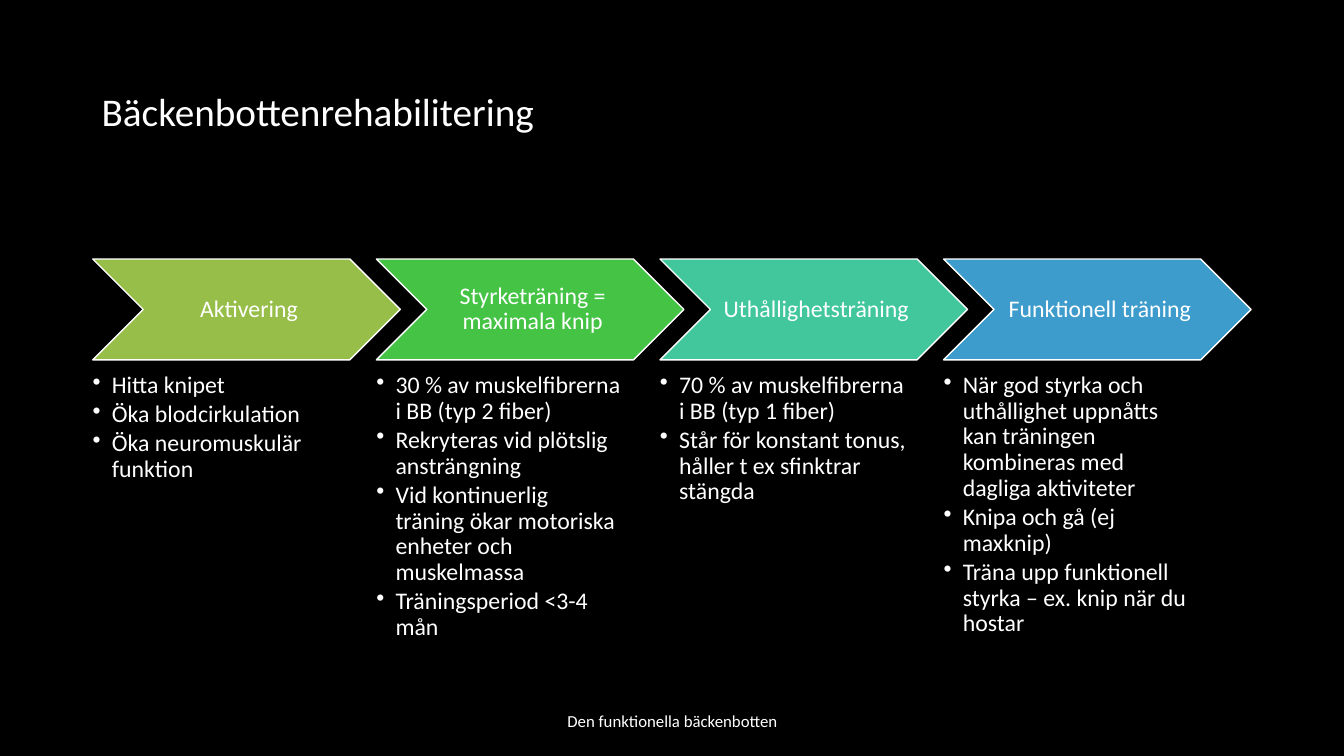
import pptx
import pptx.dml.color
import pptx.enum.shapes
import pptx.enum.text
import pptx.oxml.ns
import pptx.util
from lxml import etree

Inches = pptx.util.Inches
Pt = pptx.util.Pt
ALIGN = pptx.enum.text.PP_ALIGN
ANCHOR = pptx.enum.text.MSO_ANCHOR

WHITE = "FFFFFF"
LEFT, STEP = 0.92, 2.813
STAGES = [
    ("Aktivering", "97BE49", [
        "Hitta knipet",
        "Öka blodcirkulation",
        "Öka neuromuskulär funktion",
    ]),
    ("Styrketräning = maximala knip", "45C345", [
        "30 % av muskelfibrerna i BB (typ 2 fiber)",
        "Rekryteras vid plötslig ansträngning",
        "Vid kontinuerlig träning ökar motoriska enheter och muskelmassa",
        "Träningsperiod <3-4 mån",
    ]),
    ("Uthållighetsträning", "41C79B", [
        "70 % av muskelfibrerna i BB (typ 1 fiber)",
        "Står för konstant tonus, håller t ex sfinktrar stängda",
    ]),
    ("Funktionell träning", "3D9CCC", [
        "När god styrka och uthållighet uppnåtts kan träningen kombineras med dagliga aktiviteter",
        "Knipa och gå (ej maxknip)",
        "Träna upp funktionell styrka – ex. knip när du hostar",
    ]),
]


def color(hex_code):
    """Turn a hex string into a colour."""
    return pptx.dml.color.RGBColor.from_string(hex_code)


def set_text(sp, lines, size, align, anchor, insets, spacing=0.9):
    """Fill a shape with white paragraphs."""
    tf = sp.text_frame
    tf.word_wrap = True
    tf.vertical_anchor = anchor
    tf.margin_left, tf.margin_top, tf.margin_right, tf.margin_bottom = map(Inches, insets)
    tf.text = "\n".join(lines)
    for p in tf.paragraphs:
        p.alignment = align
        p.line_spacing = spacing
        for r in p.runs:
            r.font.name = "Calibri"
            r.font.size = Pt(size)
            r.font.color.rgb = color(WHITE)
    return tf


def add_label(s, text, box, size, align, spacing):
    """Add a one-line text box, centred vertically."""
    sp = s.shapes.add_textbox(*map(Inches, box))
    set_text(sp, [text], size, align, ANCHOR.MIDDLE, (0.1, 0.05, 0.1, 0.05), spacing)


def add_chevron(s, text, left, fill):
    """Add a stage arrow with its name."""
    sp = s.shapes.add_shape(pptx.enum.shapes.MSO_SHAPE.CHEVRON,
                            Inches(left), Inches(2.57), Inches(3.05), Inches(1))
    sp.shadow.inherit = False
    sp.fill.solid()
    sp.fill.fore_color.rgb = color(fill)
    sp.line.color.rgb = color(WHITE)
    sp.line.width = Pt(1)
    set_text(sp, [text], 17, ALIGN.CENTER, ANCHOR.MIDDLE, (0.07, 0.02, 0.02, 0.02))


def add_bullets(s, lines, left):
    """Add the bulleted list below a stage."""
    sp = s.shapes.add_textbox(Inches(left), Inches(3.7), Inches(2.44), Inches(2.7))
    tf = set_text(sp, lines, 17, ALIGN.LEFT, ANCHOR.TOP, (0, 0, 0, 0))
    for p in tf.paragraphs:
        p.space_after = Pt(2.5)
        pPr = p._p.get_or_add_pPr()
        pPr.set("marL", str(Inches(0.19)))
        pPr.set("indent", str(-Inches(0.19)))
        etree.SubElement(pPr, pptx.oxml.ns.qn("a:buChar")).set("char", "•")


def main():
    """Build and save the slide."""
    prs = pptx.Presentation()
    prs.slide_width, prs.slide_height = Inches(13.33), Inches(7.5)
    s = prs.slides.add_slide(prs.slide_layouts[6])
    s.background.fill.solid()
    s.background.fill.fore_color.rgb = color("000000")
    add_label(s, "Bäckenbottenrehabilitering", (0.91, 0.4, 11.51, 1.45), 28, ALIGN.LEFT, 0.9)
    for i, (name, fill, lines) in enumerate(STAGES):
        left = LEFT + i * STEP
        add_chevron(s, name, left, fill)
        add_bullets(s, lines, left)
    add_label(s, "Den funktionella bäckenbotten", (4.42, 6.95, 4.5, 0.4), 12, ALIGN.CENTER, 1.0)
    prs.save("out.pptx")


if __name__ == "__main__":
    main()
